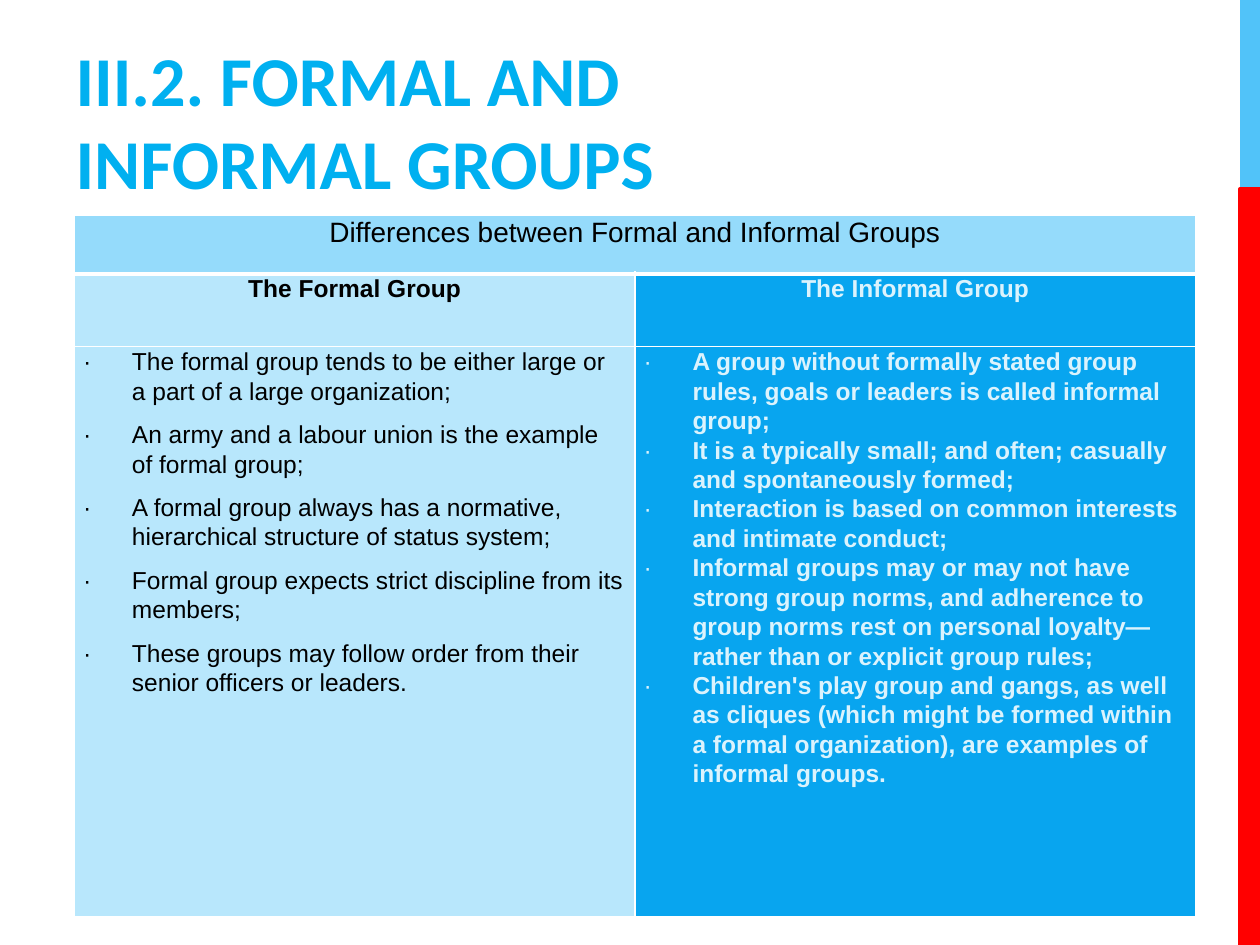
from dataclasses import dataclass
from lxml.etree import SubElement as Sub
from pptx import Presentation
from pptx.dml.color import RGBColor as Rgb
from pptx.enum.shapes import MSO_SHAPE as Form
from pptx.enum.text import MSO_ANCHOR as Anchor, MSO_AUTO_SIZE as Fit, PP_ALIGN as Align
from pptx.oxml.ns import qn
from pptx.util import Cm, Pt


@dataclass(frozen=True)
class Theme:
    title: str = "00B0F0"
    sky: str = "51C3F9"
    red: str = "FF0000"
    head: str = "95DBFB"
    pale: str = "B8E7FC"
    deep: str = "08A5EF"
    ink: str = "000000"
    ice: str = "DBF3FD"
    white: str = "FFFFFF"
    big: int = 40
    mid: int = 16
    body: int = 14
    face: str = "Calibri"
    text: str = "Arial"


@dataclass(frozen=True)
class Bar:
    top: float
    high: float
    fill: str
    line: float = 0


@dataclass(frozen=True)
class Group:
    name: str
    items: tuple[str, ...]
    fill: str
    ink: str
    bold: bool
    gap: int


LOOK = Theme()
BARS = (Bar(0, 3.81, LOOK.sky), Bar(3.81, 15.24, LOOK.red, 2.25))
GROUPS = (
    Group("The Formal Group", (
        "The formal group tends to be either large or a part of a large organization;",
        "An army and a labour union is the example of formal group;",
        "A formal group always has a normative, hierarchical structure of status system;",
        "Formal group expects strict discipline from its members;",
        "These groups may follow order from their senior officers or leaders.",
    ), LOOK.pale, LOOK.ink, False, 8),
    Group("The Informal Group", (
        "A group without formally stated group rules, goals or leaders is called informal group;",
        "It is a typically small; and often; casually and spontaneously formed;",
        "Interaction is based on common interests and intimate conduct;",
        "Informal groups may or may not have strong group norms, and adherence to "
        "group norms rest on personal loyalty— rather than or explicit group rules;",
        "Children's play group and gangs, as well as cliques (which might be formed "
        "within a formal organization), are examples of informal groups.",
    ), LOOK.deep, LOOK.ice, True, 0),
)


def style(para, size: int, face: str, ink: str, bold: bool) -> None:
    for run in para.runs:
        run.font.size = Pt(size)
        run.font.name = face
        run.font.bold = bold
        run.font.color.rgb = Rgb.from_string(ink)


def draw_bar(slide, bar: Bar) -> None:
    shape = slide.shapes.add_shape(
        Form.RECTANGLE, Cm(25), Cm(bar.top), Cm(0.4), Cm(bar.high))
    shape.shadow.inherit = False
    shape.fill.solid()
    shape.fill.fore_color.rgb = Rgb.from_string(bar.fill)
    if bar.line:
        shape.line.color.rgb = Rgb.from_string(bar.fill)
        shape.line.width = Pt(bar.line)
    else:
        shape.line.fill.background()


def draw_title(slide, text: str) -> None:
    title = slide.shapes.title
    title.left, title.top = Cm(1.27), Cm(0.43)
    title.width, title.height = Cm(16.08), Cm(3.81)
    frame = title.text_frame
    frame.text = text
    frame.word_wrap = True
    frame.auto_size = Fit.NONE
    frame.vertical_anchor = Anchor.BOTTOM
    para = frame.paragraphs[0]
    para.alignment = Align.LEFT
    style(para, LOOK.big, LOOK.face, LOOK.title, True)


def dress(cell, fill: str, base: float = 1, top: float = 1) -> None:
    cell.margin_left = cell.margin_right = Cm(0.19)
    cell.margin_top = cell.margin_bottom = 0
    props = cell._tc.get_or_add_tcPr()
    for tag, width in (("lnL", 1), ("lnR", 1), ("lnT", top), ("lnB", base)):
        edge = Sub(props, qn(f"a:{tag}"), w=str(Pt(width)))
        Sub(Sub(edge, qn("a:solidFill")), qn("a:srgbClr"), val=LOOK.white)
    cell.fill.solid()
    cell.fill.fore_color.rgb = Rgb.from_string(fill)


def put_head(cell, text: str, size: int, ink: str, bold: bool) -> None:
    cell.text_frame.text = text
    para = cell.text_frame.paragraphs[0]
    para.alignment = Align.CENTER
    para.line_spacing = 1.07
    style(para, size, LOOK.text, ink, bold)


def put_list(cell, group: Group) -> None:
    cell.text_frame.text = "\n".join(group.items)
    for rank, para in enumerate(cell.text_frame.paragraphs):
        props = para._p.get_or_add_pPr()
        props.set("marL", str(Cm(0.97)))
        props.set("indent", str(-Cm(0.97)))
        Sub(Sub(props, qn("a:buClr")), qn("a:srgbClr"), val=group.ink)
        Sub(props, qn("a:buFont"), typeface=LOOK.text)
        Sub(props, qn("a:buChar"), char="∙")
        para.line_spacing = 1.07
        para.space_before = Pt(group.gap if rank else 0)
        style(para, LOOK.body, LOOK.text, group.ink, group.bold)


def draw_table(slide, text: str, groups: tuple[Group, ...]) -> None:
    highs = (1.19, 1.47, 11.5)
    wide = 11.3
    table = slide.shapes.add_table(
        len(highs), len(groups), Cm(1.5), Cm(4.33),
        Cm(wide * len(groups)), Cm(sum(highs))).table
    for row, high in zip(table.rows, highs):
        row.height = Cm(high)
    for col, group in enumerate(groups):
        table.columns[col].width = Cm(wide)
        top, name, body = (table.cell(row, col) for row in range(len(highs)))
        dress(top, LOOK.head, base=3)
        dress(name, group.fill, top=3)
        dress(body, group.fill)
        put_head(name, group.name, LOOK.body, group.ink, True)
        put_list(body, group)
    lead = table.cell(0, 0)
    lead.merge(table.cell(0, len(groups) - 1))
    put_head(lead, text, LOOK.mid, LOOK.ink, False)


def main() -> None:
    deck = Presentation()
    deck.slide_width, deck.slide_height = Cm(25.4), Cm(19.05)
    slide = deck.slides.add_slide(deck.slide_layouts[5])
    for bar in BARS:
        draw_bar(slide, bar)
    draw_title(slide, "III.2. FORMAL AND INFORMAL GROUPS")
    draw_table(slide, "Differences between Formal and Informal Groups", GROUPS)
    deck.save("out.pptx")


if __name__ == "__main__":
    main()
